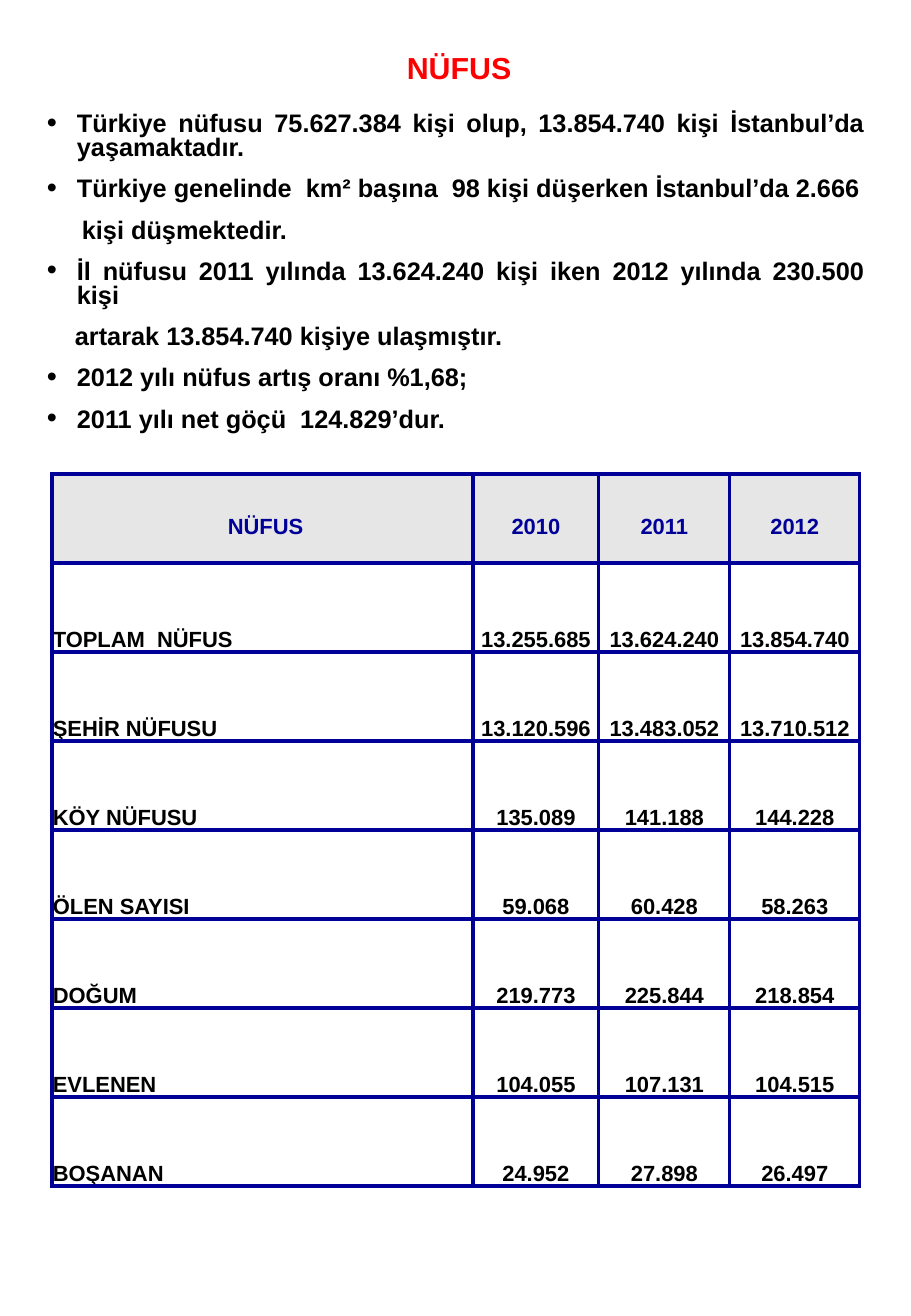
from lxml import etree
from pptx import Presentation
from pptx.dml.color import RGBColor
from pptx.enum.text import MSO_ANCHOR, MSO_AUTO_SIZE, PP_ALIGN
from pptx.oxml.ns import qn
from pptx.util import Inches, Pt

TITLE = " NÜFUS"
BULLET_INDENT = 30
# (text, left indent in px, bulleted)
FACTS = [
    ("Türkiye nüfusu 75.627.384 kişi olup, 13.854.740 kişi İstanbul’da yaşamaktadır.", 30, True),
    ("Türkiye genelinde  km² başına  98 kişi düşerken İstanbul’da 2.666", 30, True),
    ("kişi düşmektedir.", 35, False),
    ("İl nüfusu 2011 yılında 13.624.240 kişi iken 2012 yılında 230.500 kişi", 30, True),
    ("artarak 13.854.740 kişiye ulaşmıştır.", 28, False),
    ("2012 yılı nüfus artış oranı %1,68;", 30, True),
    ("2011 yılı net göçü  124.829’dur.", 30, True),
]
ROWS = [
    (" NÜFUS", "2010", "2011", "2012"),
    ("TOPLAM  NÜFUS", "13.255.685", "13.624.240", "13.854.740"),
    ("ŞEHİR NÜFUSU", "13.120.596", "13.483.052", "13.710.512"),
    ("KÖY NÜFUSU", "135.089", "141.188", "144.228"),
    ("ÖLEN SAYISI", "59.068", "60.428", "58.263"),
    ("DOĞUM", "219.773", "225.844", "218.854"),
    ("EVLENEN", "104.055", "107.131", "104.515"),
    ("BOŞANAN", "24.952", "27.898", "26.497"),
]
COL_WIDTHS = [421, 126, 131, 130]
ROW_HEIGHT = 89

BLACK = RGBColor(0x00, 0x00, 0x00)
RED = RGBColor(0xFF, 0x00, 0x00)
NAVY = RGBColor(0x00, 0x00, 0x99)
GREY = RGBColor(0xE7, 0xE6, 0xE6)
CENTER, JUSTIFY = PP_ALIGN.CENTER, PP_ALIGN.JUSTIFY
TOP, BOTTOM = MSO_ANCHOR.TOP, MSO_ANCHOR.BOTTOM
NO_FIT = MSO_AUTO_SIZE.NONE


def px(n):
    return round(n * 914400 / 121.5)


def set_all(obj, values):
    for name, value in values.items():
        setattr(obj, name, value)


def write(p, text, size, color, align):
    p.alignment = align
    r = p.add_run()
    r.text = text
    set_all(r.font, {"name": "Arial", "size": Pt(size), "bold": True})
    r.font.color.rgb = color


def set_indent(p, left, bulleted):
    pPr = p._p.get_or_add_pPr()
    pPr.set("marL", str(px(left)))
    pPr.set("indent", str(px(-BULLET_INDENT) if bulleted else 0))
    if bulleted:
        etree.SubElement(pPr, qn("a:buSzPct"), val="114000")
        etree.SubElement(pPr, qn("a:buFont"), typeface="Arial")
        etree.SubElement(pPr, qn("a:buChar"), char="•")
    else:
        etree.SubElement(pPr, qn("a:buNone"))


def set_borders(cell):
    tcPr = cell._tc.get_or_add_tcPr()
    for side in ("lnL", "lnR", "lnT", "lnB"):
        ln = etree.SubElement(tcPr, qn("a:" + side), w=str(Pt(2.25)))
        fill = etree.SubElement(ln, qn("a:solidFill"))
        etree.SubElement(fill, qn("a:srgbClr"), val=str(NAVY))


def add_title(s):
    sp = s.shapes.title
    set_all(sp, {"left": px(51), "top": px(43), "width": px(808), "height": px(49)})
    tf = sp.text_frame
    set_all(tf, {"word_wrap": True, "auto_size": NO_FIT, "vertical_anchor": TOP})
    write(tf.paragraphs[0], TITLE, 18, RED, CENTER)


def add_facts(s):
    tf = s.shapes.add_textbox(px(35), px(107), px(842), px(350)).text_frame
    tf.word_wrap = True
    for i, (text, left, bulleted) in enumerate(FACTS):
        p = tf.add_paragraph() if i else tf.paragraphs[0]
        write(p, text, 15, BLACK, JUSTIFY)
        set_all(p, {"line_spacing": 0.8, "space_before": Pt(10)})
        set_indent(p, left, bulleted)


def add_population_table(s):
    table = s.shapes.add_table(len(ROWS), len(COL_WIDTHS), px(52), px(474),
                               px(sum(COL_WIDTHS)), px(ROW_HEIGHT * len(ROWS))).table
    set_all(table, {"first_row": False, "horz_banding": False})
    for col, width in zip(table.columns, COL_WIDTHS):
        col.width = px(width)
    for r, values in enumerate(ROWS):
        table.rows[r].height = px(ROW_HEIGHT)
        header = r == 0
        for c, text in enumerate(values):
            cell = table.cell(r, c)
            set_all(cell, {"margin_left": px(1), "margin_right": px(1), "margin_top": px(1),
                           "margin_bottom": px(24 if header else 0),
                           "vertical_anchor": BOTTOM})
            write(cell.text_frame.paragraphs[0], text, 13, NAVY if header else BLACK,
                  CENTER if header or c else JUSTIFY)
            set_borders(cell)
            if header:
                cell.fill.solid()
                cell.fill.fore_color.rgb = GREY
            else:
                cell.fill.background()


def main():
    prs = Presentation()
    set_all(prs, {"slide_width": Inches(7.5), "slide_height": Inches(10.83)})
    s = prs.slides.add_slide(prs.slide_layouts[5])
    add_title(s)
    add_facts(s)
    add_population_table(s)
    prs.save("out.pptx")


if __name__ == "__main__":
    main()
